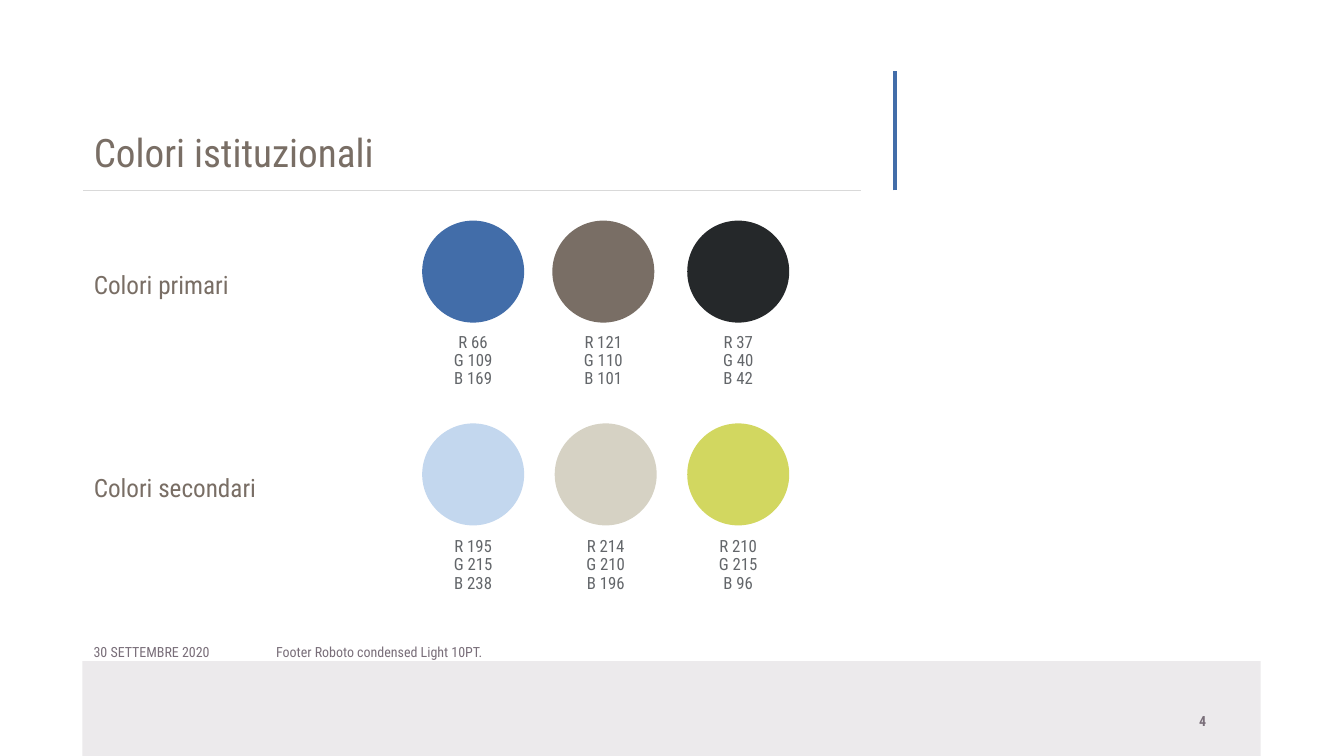
from lxml.etree import SubElement
from pptx import Presentation
from pptx.dml.color import RGBColor
from pptx.enum.shapes import MSO_CONNECTOR, MSO_SHAPE
from pptx.enum.text import MSO_ANCHOR, MSO_AUTO_SIZE, PP_ALIGN
from pptx.oxml.ns import qn
from pptx.util import Cm, Pt

FONT = "Roboto Condensed"
BLUE, BROWN, MAUVE, GREY, RULE = "426DA9", "796E65", "796E79", "63666A", "D9D9D9"
LEFT, WIDE = 2.11, 21.16
DISC = 2.57


def tint(color, value):
    color.rgb = RGBColor.from_string(value)


def write(shape, box, lines, size, color, align=PP_ALIGN.LEFT, bold=False):
    """Place a text holder and fill it with evenly formatted lines."""
    shape.left, shape.top, shape.width, shape.height = map(Cm, box)
    frame = shape.text_frame
    frame.word_wrap = True
    frame.auto_size = MSO_AUTO_SIZE.NONE
    frame.vertical_anchor = MSO_ANCHOR.TOP
    frame.text = "\n".join(lines)
    for para in frame.paragraphs:
        props = para._p.get_or_add_pPr()
        props.set("marL", "0")
        props.set("indent", "0")
        SubElement(props, qn("a:buNone"))
        para.alignment = align
        para.line_spacing = 0.9
        para.space_before = para.space_after = Pt(0)
        para.font.name, para.font.size, para.font.bold = FONT, Pt(size), bold
        tint(para.font.color, color)


def label(slide, box, *args, **kwargs):
    write(slide.shapes.add_textbox(0, 0, 0, 0), box, *args, **kwargs)


def solid(slide, kind, box, color):
    shape = slide.shapes.add_shape(kind, *map(Cm, box))
    shape.shadow.inherit = False
    shape.fill.solid()
    tint(shape.fill.fore_color, color)
    shape.line.fill.background()
    return shape


def rule(slide, ends, color, width):
    line = slide.shapes.add_connector(MSO_CONNECTOR.STRAIGHT, *map(Cm, ends))
    tint(line.line.color, color)
    line.line.width = Pt(width)
    SubElement(line._element.spPr, qn("a:effectLst"))


def header(slide, top):
    """Title with a thin rule below and a blue bar at its right."""
    write(slide.shapes.title, (LEFT, top, WIDE, 1.14),
          ["Colori istituzionali"], 28, BROWN)
    base = top + 1.55
    rule(slide, (21.69, base, 2.08, base), RULE, 1)
    rule(slide, (22.56, base, 22.56, base - 3.02), BLUE, 3)


def palette(slide, holder, name, top, drop, swatches):
    """Heading at the left, then discs with their RGB values below."""
    write(holder, (LEFT, top + 1.18, WIDE, 1.14), [name], 18, BROWN)
    for left, rgb in swatches:
        solid(slide, MSO_SHAPE.OVAL, (left, top, DISC, DISC),
              "%02X%02X%02X" % rgb)
        lines = [f"{key} {value}" for key, value in zip("RGB", rgb)]
        label(slide, (left, top + drop, DISC, 2.39), lines, 12, GREY,
              PP_ALIGN.CENTER)


def footer(slide, top):
    """Date and note above a pale band that holds the page number."""
    band = solid(slide, MSO_SHAPE.RECTANGLE, (2.08, top, 29.69, 2.39), MAUVE)
    shade = band._element.spPr.find(qn("a:solidFill"))[0]
    SubElement(shade, qn("a:alpha")).set("val", "14000")
    row = top - 0.53
    label(slide, (LEFT, row, 4.57, 0.43), ["30 SETTEMBRE 2020"], 10, MAUVE)
    label(slide, (6.71, row, 23.29, 0.43),
          ["Footer Roboto condensed Light 10PT."], 10, MAUVE)
    label(slide, (29.97, top + 1.22, 2.31, 0.43), ["4"], 10, MAUVE, bold=True)


def main():
    deck = Presentation()
    deck.slide_width, deck.slide_height = Cm(33.87), Cm(19.05)
    slide = deck.slides.add_slide(deck.slide_layouts[3])
    first, second = slide.placeholders[1], slide.placeholders[2]

    header(slide, 3.25)
    palette(slide, first, "Colori primari", 5.56, 2.72, [
        (10.64, (66, 109, 169)), (13.92, (121, 110, 101)),
        (17.32, (37, 40, 42))])
    palette(slide, second, "Colori secondari", 10.67, 2.77, [
        (10.64, (195, 215, 238)), (13.98, (214, 210, 196)),
        (17.32, (210, 215, 96))])
    footer(slide, 16.66)
    deck.save("out.pptx")


if __name__ == "__main__":
    main()
